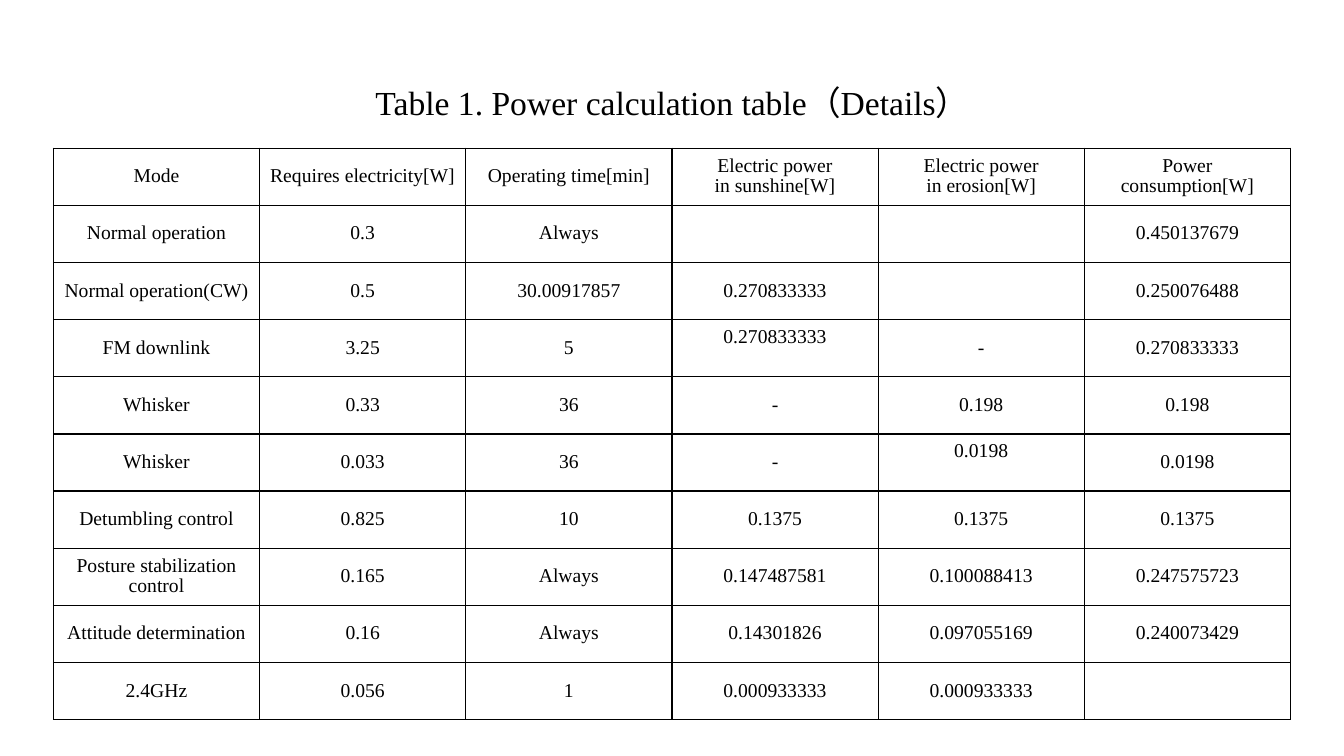
from lxml.etree import SubElement
from pptx import Presentation
from pptx.dml.color import RGBColor
from pptx.enum.text import MSO_ANCHOR, MSO_AUTO_SIZE, PP_ALIGN
from pptx.oxml.ns import qn
from pptx.util import Inches, Pt

TITLE = "Table 1. Power calculation table（Details）"
HEADERS = ("Mode", "Requires electricity[W]", "Operating time[min]",
           "Electric power\vin sunshine[W]", "Electric power\vin erosion[W]",
           "Power consumption[W]")
MODES = [
    ("Normal operation", "0.3", "Always", "", "", "0.450137679"),
    ("Normal operation(CW)", "0.5", "30.00917857", "0.270833333", "", "0.250076488"),
    ("FM downlink", "3.25", "5", "0.270833333", "-", "0.270833333"),
    ("Whisker", "0.33", "36", "-", "0.198", "0.198"),
    ("Whisker", "0.033", "36", "-", "0.0198", "0.0198"),
    ("Detumbling control", "0.825", "10", "0.1375", "0.1375", "0.1375"),
    ("Posture stabilization control", "0.165", "Always", "0.147487581",
     "0.100088413", "0.247575723"),
    ("Attitude determination", "0.16", "Always", "0.14301826", "0.097055169",
     "0.240073429"),
    ("2.4GHz", "0.056", "1", "0.000933333", "0.000933333", ""),
]
RAISED = {(3, 3), (5, 4)}
FONT = "Times New Roman"
BLACK = RGBColor(0, 0, 0)
WHITE = RGBColor(255, 255, 255)


def format_text(frame, size):
    """Centre the text and set its font."""
    for paragraph in frame.paragraphs:
        paragraph.alignment = PP_ALIGN.CENTER
        for run in paragraph.runs:
            run.font.name = FONT
            run.font.size = Pt(size)
            run.font.color.rgb = BLACK


def add_borders(cell):
    """Draw a thin black line on each side of a cell."""
    properties = cell._tc.get_or_add_tcPr()
    for index, side in enumerate(("lnL", "lnR", "lnT", "lnB")):
        line = properties.makeelement(qn(f"a:{side}"), {"w": str(Pt(1))})
        fill = SubElement(line, qn("a:solidFill"))
        SubElement(fill, qn("a:srgbClr"), val=str(BLACK))
        properties.insert(index, line)


def add_title(slide):
    """Place the table caption in the title placeholder."""
    title = slide.shapes.title
    title.left, title.top = Inches(3.2), Inches(0.76)
    title.width, title.height = Inches(6.94), Inches(0.5)
    frame = title.text_frame
    frame.text = TITLE
    frame.word_wrap = False
    frame.auto_size = MSO_AUTO_SIZE.SHAPE_TO_FIT_TEXT
    format_text(frame, 24)


def add_power_table(slide):
    """Build the power table, one row for each mode."""
    rows = [HEADERS, *MODES]
    table = slide.shapes.add_table(len(rows), len(HEADERS), Inches(0.53), Inches(1.47),
                                   Inches(12.27), Inches(5.67)).table
    for r, row in enumerate(rows):
        for c, value in enumerate(row):
            cell = table.cell(r, c)
            cell.fill.solid()
            cell.fill.fore_color.rgb = WHITE
            add_borders(cell)
            cell.vertical_anchor = MSO_ANCHOR.MIDDLE
            if value:
                cell.text_frame.text = value
                cell.text_frame.paragraphs[0].line_spacing = 0.93
                format_text(cell.text_frame, 14)
            if (r, c) in RAISED:
                cell.margin_bottom = Inches(0.27)


def main():
    """Create the slide and save it."""
    deck = Presentation()
    deck.slide_width, deck.slide_height = Inches(13.33), Inches(7.5)
    slide = deck.slides.add_slide(deck.slide_layouts[5])
    add_title(slide)
    add_power_table(slide)
    deck.save("out.pptx")


if __name__ == "__main__":
    main()
